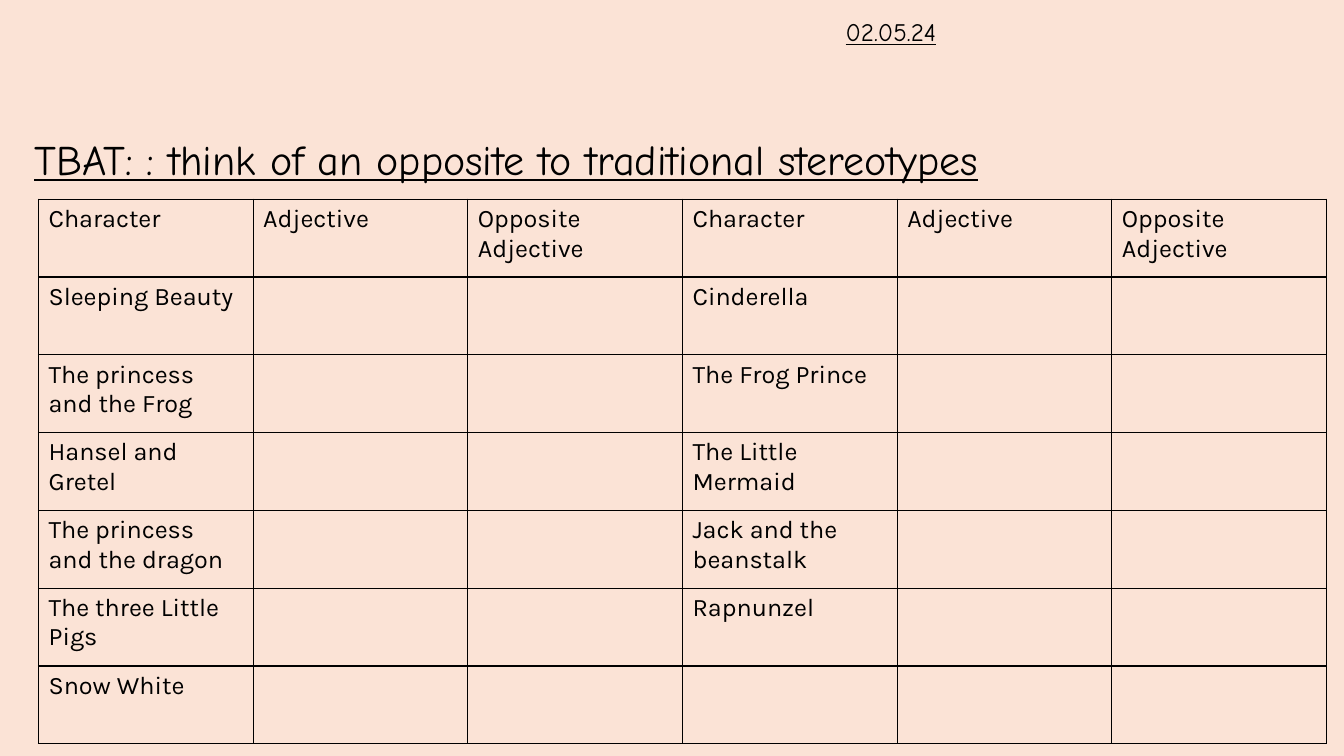
from lxml import etree
from pptx import Presentation
from pptx import util as u
from pptx.dml import color
from pptx.enum import text
from pptx.oxml import ns

COLOURS = {"page": "FBE3D6", "ink": "000000"}
HEADINGS = ["Character", "Adjective", "Opposite Adjective"]
CHARACTERS = [
    ("Sleeping Beauty", "Cinderella"),
    ("The princess and the Frog", "The Frog Prince"),
    ("Hansel and Gretel", "The Little Mermaid"),
    ("The princess and the dragon", "Jack and the beanstalk"),
    ("The three Little Pigs", "Rapnunzel"),
    ("Snow White", ""),
]


def colour(name):
    return color.RGBColor.from_string(COLOURS[name])


def style(para, font, size, underline=False):
    for span in para.runs:
        span.font.name = font
        span.font.size = u.Pt(size)
        span.font.underline = underline
        span.font.color.rgb = colour("ink")


def add_underlined_line(page, box, wording, size):
    frame = page.shapes.add_textbox(*map(u.Cm, box)).text_frame
    frame.word_wrap = True
    frame.auto_size = text.MSO_AUTO_SIZE.SHAPE_TO_FIT_TEXT
    frame.text = wording
    style(frame.paragraphs[0], "Comic Neue", size, underline=True)


def add_borders(cell, points):
    properties = cell._tc.get_or_add_tcPr()
    for side in ("a:lnL", "a:lnR", "a:lnT", "a:lnB"):
        line = etree.SubElement(properties, ns.qn(side), w=str(u.Pt(points)))
        fill = etree.SubElement(line, ns.qn("a:solidFill"))
        etree.SubElement(fill, ns.qn("a:srgbClr"), val=COLOURS["ink"])


def add_character_table(page, box):
    rows = [HEADINGS * 2]
    rows += [[left, "", "", right, "", ""] for left, right in CHARACTERS]
    frame = page.shapes.add_table(len(rows), len(rows[0]), *map(u.Cm, box))
    table = frame.table
    table.first_row = table.horz_banding = False
    for row, wordings in enumerate(rows):
        for column, wording in enumerate(wordings):
            cell = table.cell(row, column)
            add_borders(cell, 1)
            cell.fill.background()
            if wording:
                cell.text = wording
                style(cell.text_frame.paragraphs[0], "Karla", 18)


def build_worksheet(deck):
    page = deck.slides.add_slide(deck.slide_layouts[6])
    page.background.fill.solid()
    page.background.fill.fore_color.rgb = colour("page")
    add_character_table(page, (0.97, 5.02, 32.46, 13.72))
    add_underlined_line(
        page, (0.61, 3.23, 34, 1.54),
        "TBAT: : think of an opposite to traditional stereotypes", 30)
    add_underlined_line(page, (21.06, 0.28, 15, 1.02), "02.05.24", 18)


def main():
    deck = Presentation()
    deck.slide_width = u.Cm(33.87)
    deck.slide_height = u.Cm(19.05)
    build_worksheet(deck)
    deck.save("out.pptx")


if __name__ == "__main__":
    main()
